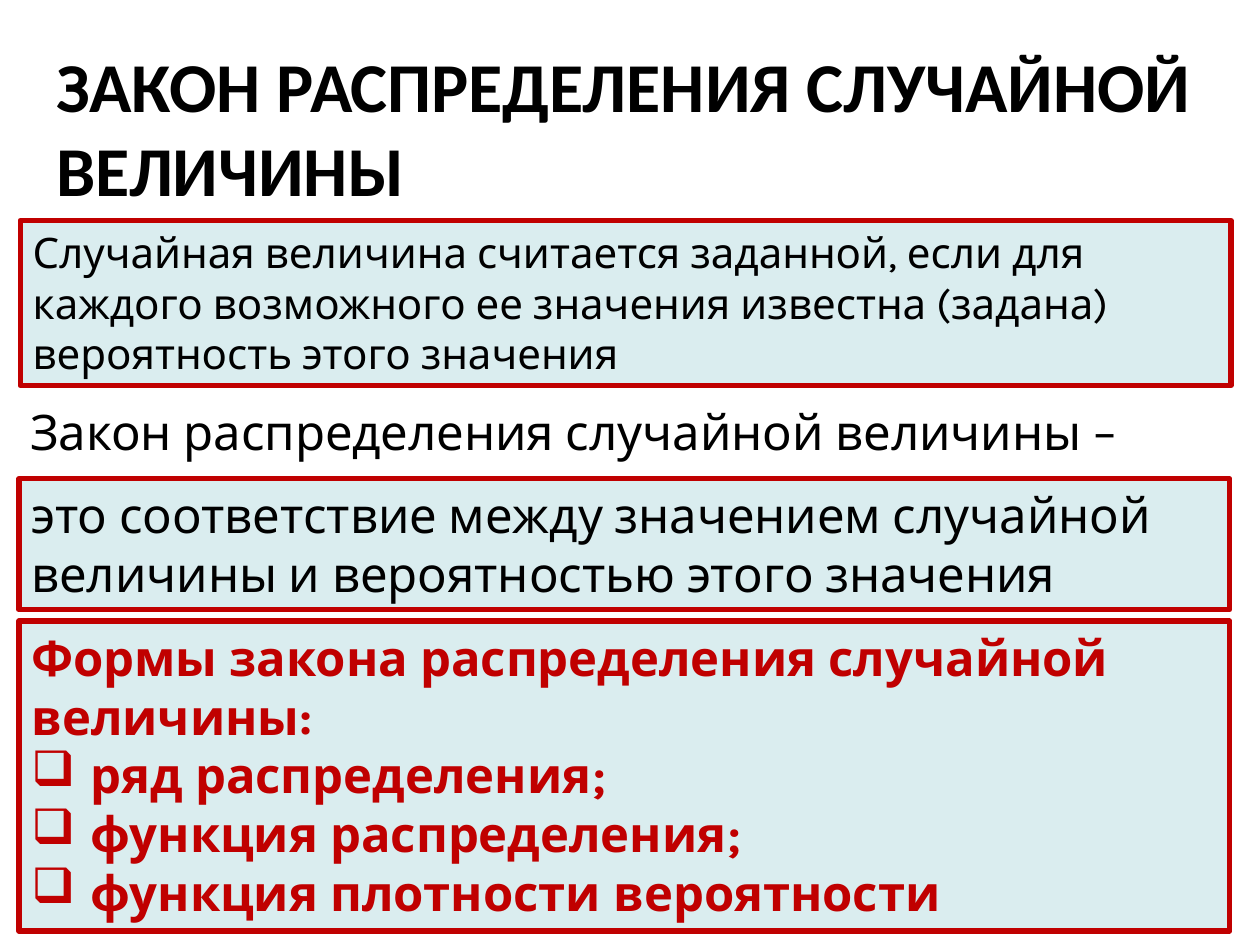
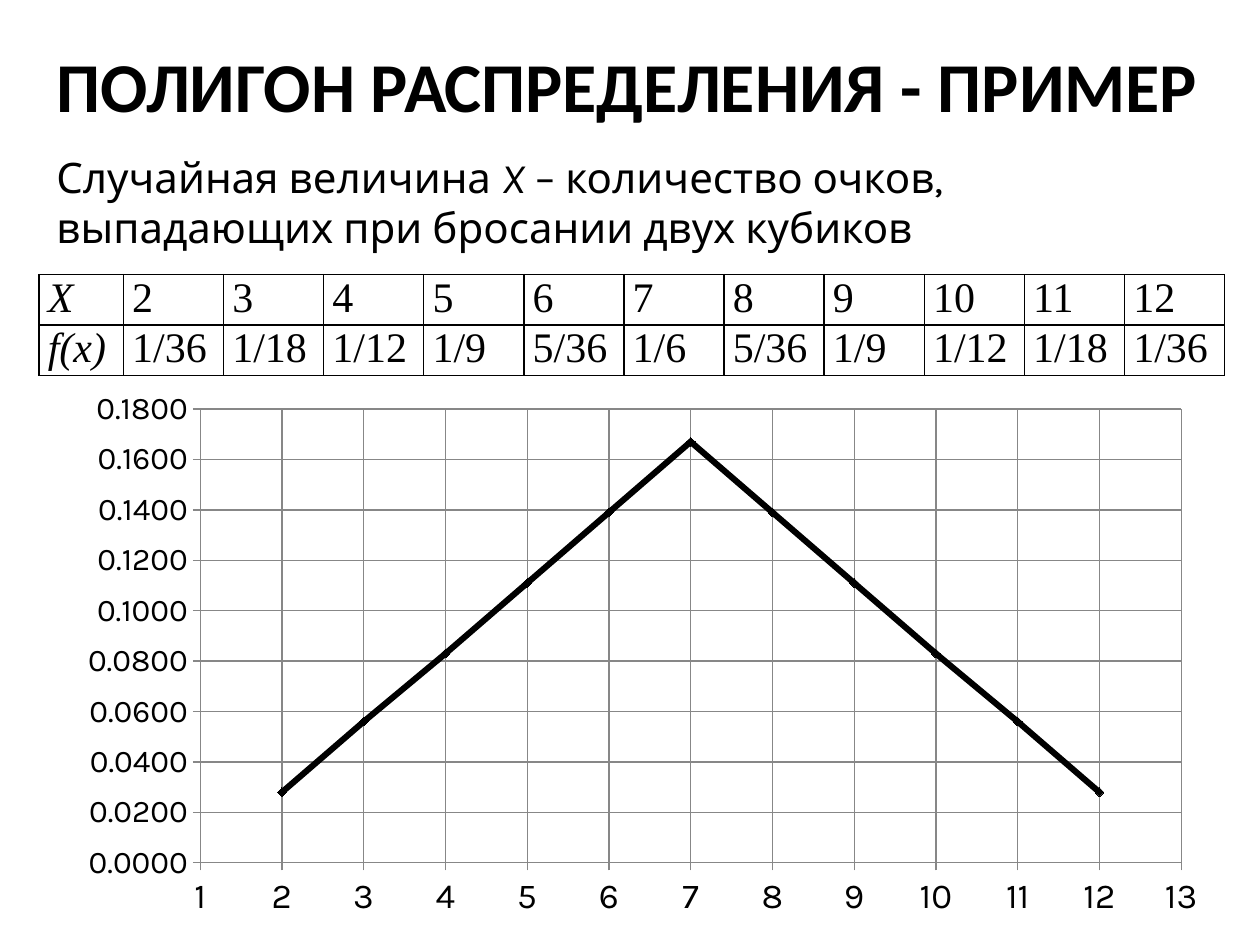
from dataclasses import dataclass
from typing import NamedTuple

from lxml import etree
from pptx import Presentation
from pptx import util as u
from pptx.chart import data as chart_data
from pptx.dml.color import RGBColor
from pptx.enum import chart as ch, shapes, text
from pptx.oxml import ns

BLACK = RGBColor(0x00, 0x00, 0x00)
RED = RGBColor(0xC0, 0x00, 0x00)
PALE = RGBColor(0xDA, 0xED, 0xEF)
GRID = RGBColor(0x87, 0x87, 0x87)

BODY, HEAD, SERIF = "Karla", "Calibri", "Times New Roman"
WIDTH, HEIGHT = u.Inches(10), u.Inches(7.5)
COL, ROW = WIDTH / 100, HEIGHT / 75  # layout grid


class Area(NamedTuple):
    """Left, top, width and height in grid columns and rows."""
    x: float
    y: float
    w: float
    h: float

    def emu(self) -> tuple[int, ...]:
        return tuple(round(n * s) for n, s in zip(self, (COL, ROW, COL, ROW)))


@dataclass
class Block:
    """A text block; words between asterisks are italic."""
    area: Area
    lines: list[str]
    size: int = 28
    color: RGBColor = BLACK
    bold: bool = False
    name: str = BODY
    framed: bool = False
    bulleted_from: int = 99


def set_font(font, color: RGBColor = BLACK, **values) -> None:
    for key, value in values.items():
        setattr(font, key, value)
    font.color.rgb = color


def add_bullet(p, hang: int) -> None:
    ppr = p._p.get_or_add_pPr()
    ppr.set("marL", str(hang))
    ppr.set("indent", str(-hang))
    etree.SubElement(ppr, ns.qn("a:buChar"), char="❑")


def add_block(s, block: Block) -> None:
    at = block.area.emu()
    if block.framed:
        sp = s.shapes.add_shape(shapes.MSO_SHAPE.RECTANGLE, *at)
        sp.shadow.inherit = False
        sp.fill.solid()
        sp.fill.fore_color.rgb = PALE
        sp.line.color.rgb = RED
        sp.line.width = u.Pt(3)
    else:
        sp = s.shapes.add_textbox(*at)
    tf = sp.text_frame
    tf.word_wrap = True
    tf.auto_size = text.MSO_AUTO_SIZE.SHAPE_TO_FIT_TEXT
    tf.vertical_anchor = text.MSO_ANCHOR.TOP
    for i, line in enumerate(block.lines):
        p = tf.paragraphs[0] if i == 0 else tf.add_paragraph()
        p.alignment = text.PP_ALIGN.LEFT
        if i >= block.bulleted_from:
            add_bullet(p, u.Inches(0.47))
        for k, part in enumerate(line.split("*")):
            r = p.add_run()
            r.text = part
            set_font(r.font, block.color, size=u.Pt(block.size), name=block.name,
                     bold=block.bold, italic=k % 2 == 1)


def add_title(s, title: str, rows: float) -> None:
    add_block(s, Block(Area(3.5, 2.9, 94.5, rows), [title], 40, bold=True, name=HEAD))


def add_borders(cell) -> None:
    tcpr = cell._tc.get_or_add_tcPr()
    for side in ("lnL", "lnR", "lnT", "lnB"):
        ln = etree.SubElement(tcpr, ns.qn(f"a:{side}"), w=str(u.Pt(1)))
        fill = etree.SubElement(ln, ns.qn("a:solidFill"))
        etree.SubElement(fill, ns.qn("a:srgbClr"), val=str(BLACK))


def add_table(s, area: Area, rows: list[list[str]], first_col: float) -> None:
    """Draw a grid whose first column holds italic row names."""
    count = len(rows[0])
    table = s.shapes.add_table(len(rows), count, *area.emu()).table
    table.first_row = table.horz_banding = False
    other_col = (area.w - first_col) / (count - 1)
    for c, column in enumerate(table.columns):
        column.width = round((other_col if c else first_col) * COL)
    for y, row in enumerate(rows):
        for c, value in enumerate(row):
            cell = table.cell(y, c)
            cell.margin_left = cell.margin_right = u.Inches(0.07)
            cell.margin_top = cell.margin_bottom = 0
            add_borders(cell)
            cell.fill.background()
            r = cell.text_frame.paragraphs[0].add_run()
            r.text = value
            set_font(r.font, size=u.Pt(24), name=SERIF, italic=c == 0)


def style_axis(axis, low: float, high: float, step: float, size: int, fmt: str) -> None:
    values = dict(minimum_scale=low, maximum_scale=high, major_unit=step,
                  has_major_gridlines=True, has_title=False,
                  major_tick_mark=ch.XL_TICK_MARK.OUTSIDE)
    for key, value in values.items():
        setattr(axis, key, value)
    for line in (axis.format.line, axis.major_gridlines.format.line):
        line.color.rgb = GRID
        line.width = u.Pt(0.75)
    labels = axis.tick_labels
    labels.number_format, labels.number_format_is_linked = fmt, False
    set_font(labels.font, size=u.Pt(size), name=BODY)


def place_plot(chart, **shares: float) -> None:
    """Fix the inner plot area by shares of the chart's size."""
    plot_area = chart._chartSpace.chart.plotArea
    for old in plot_area.findall(ns.qn("c:layout")):
        plot_area.remove(old)
    layout = etree.Element(ns.qn("c:layout"))
    plot_area.insert(0, layout)
    manual = etree.SubElement(layout, ns.qn("c:manualLayout"))
    fixed = dict(layoutTarget="inner", xMode="edge", yMode="edge")
    for key, value in (fixed | shares).items():
        etree.SubElement(manual, ns.qn(f"c:{key}"), val=str(value))


def add_polygon_chart(s, area: Area, points: list[tuple[int, float]]) -> None:
    data = chart_data.XyChartData()
    series_data = data.add_series("Series 1")
    for point in points:
        series_data.add_data_point(*point)
    chart = s.shapes.add_chart(ch.XL_CHART_TYPE.XY_SCATTER_LINES, *area.emu(), data).chart
    chart.has_legend = chart.has_title = False
    set_font(chart.font, size=u.Pt(10), name=BODY)
    chart.plots[0].vary_by_categories = False
    style_axis(chart.category_axis, 1, 13, 1, 20, "0")
    style_axis(chart.value_axis, 0, 0.18, 0.02, 18, "0.0000")
    place_plot(chart, x=0.12, y=0.05, w=0.85, h=0.83)
    series = chart.plots[0].series[0]
    series.smooth = False
    series.format.line.color.rgb = BLACK
    series.format.line.width = u.Pt(3.5)
    marker = series.marker
    marker.style, marker.size = ch.XL_MARKER_STYLE.DIAMOND, 5
    marker.format.fill.solid()
    marker.format.fill.fore_color.rgb = BLACK
    marker.format.line.color.rgb = BLACK


def build_law_slide(s) -> None:
    add_title(s, "ЗАКОН РАСПРЕДЕЛЕНИЯ СЛУЧАЙНОЙ ВЕЛИЧИНЫ", 14.5)
    blocks = [
        Block(Area(1.6, 17.5, 96.1, 13.1),
              ["Случайная величина считается заданной, если для каждого возможного "
               "ее значения известна (задана) вероятность этого значения"],
              size=24, framed=True),
        Block(Area(1.5, 49.3, 96.1, 24.6),
              ["Формы закона распределения случайной величины:",
               "ряд распределения;",
               "функция распределения;",
               "функция плотности вероятности"],
              color=RED, bold=True, framed=True, bulleted_from=1),
        Block(Area(1.5, 38, 96.1, 10.4),
              ["это соответствие между значением случайной величины "
               "и вероятностью этого значения"], framed=True),
        Block(Area(1.4, 31.4, 96.2, 5.7), ["Закон распределения случайной величины –"]),
    ]
    for block in blocks:
        add_block(s, block)


def build_polygon_slide(s) -> None:
    add_title(s, "ПОЛИГОН РАСПРЕДЕЛЕНИЯ - ПРИМЕР", 7.7)
    add_block(s, Block(Area(3.5, 11.5, 93.7, 9.1),
                       ["Случайная величина *X* – количество очков, "
                        "выпадающих при бросании двух кубиков"], size=24))
    sums = range(2, 13)
    rising = ["1/36", "1/18", "1/12", "1/9", "5/36"]
    odds = rising + ["1/6"] + rising[::-1]
    add_table(s, Area(3.1, 21.8, 94.1, 8),
              [["X", *map(str, sums)], ["f(x)", *odds]], first_col=6.7)
    add_polygon_chart(s, Area(4.9, 30.3, 91.6, 43.4),
                      [(n, round((6 - abs(7 - n)) / 36, 3)) for n in sums])


def main() -> None:
    prs = Presentation()
    prs.slide_width, prs.slide_height = WIDTH, HEIGHT
    for build in (build_law_slide, build_polygon_slide):
        build(prs.slides.add_slide(prs.slide_layouts[6]))
    prs.save("out.pptx")


if __name__ == "__main__":
    main()
